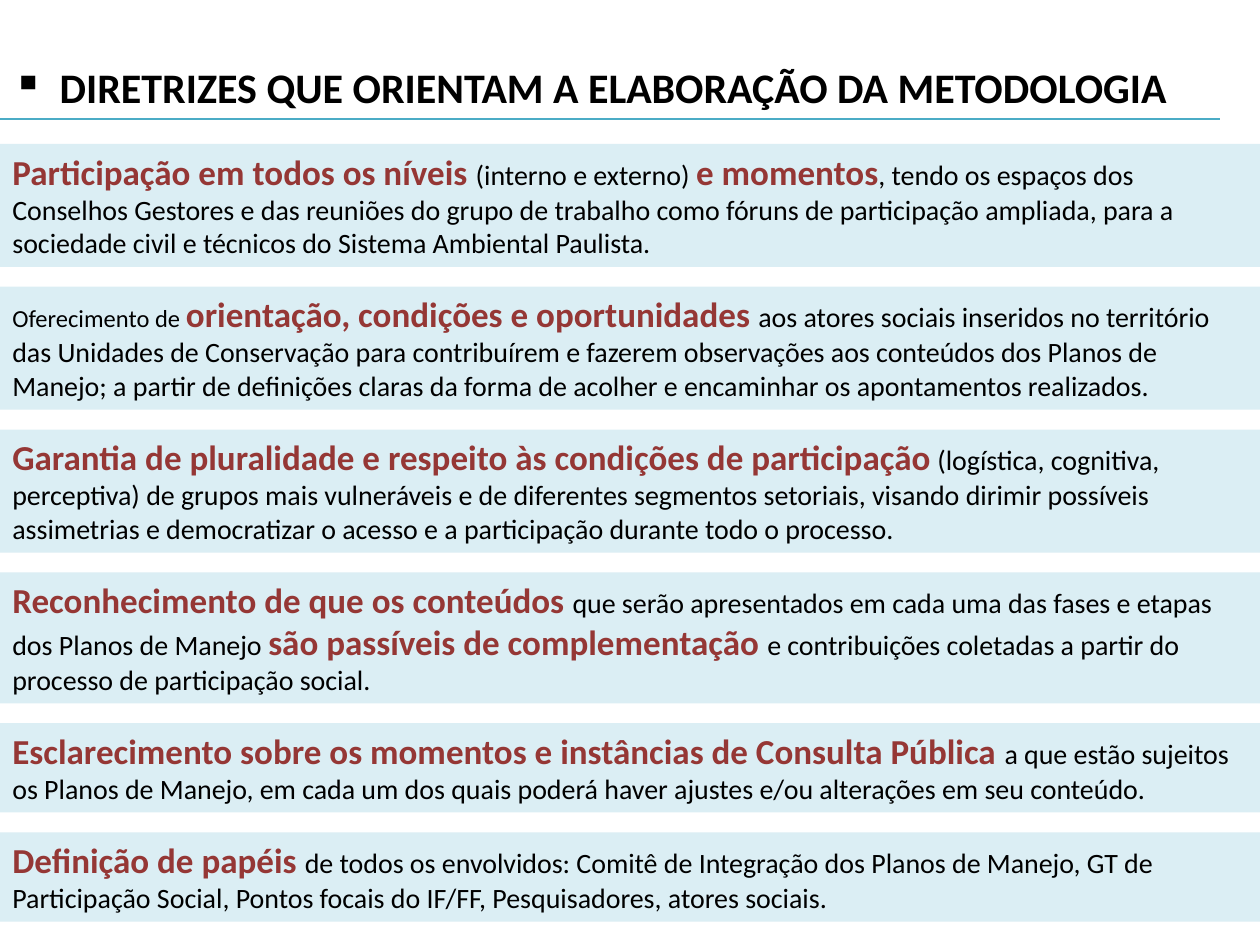
from lxml import etree
from pptx import Presentation
from pptx.dml.color import RGBColor
from pptx.enum.shapes import MSO_CONNECTOR, MSO_SHAPE
from pptx.enum.text import MSO_ANCHOR, MSO_AUTO_SIZE, PP_ALIGN
from pptx.oxml.ns import qn
from pptx.util import Cm, Pt

RECT = MSO_SHAPE.RECTANGLE
STRAIGHT = MSO_CONNECTOR.STRAIGHT
TOP = MSO_ANCHOR.TOP
LEFT = PP_ALIGN.LEFT
NO_FIT = MSO_AUTO_SIZE.NONE

BLACK = RGBColor(0x00, 0x00, 0x00)
RED = RGBColor(0x95, 0x37, 0x35)
PALE = RGBColor(0xDB, 0xEE, 0xF4)
TEAL = RGBColor(0x4B, 0xAC, 0xC6)

HEAD = (24, BLACK, True)
KEY = (20, RED, True)
BODY = (16, BLACK, False)
SMALL = (14, BLACK, False)

WIDTH = 25.4
GAP = 0.4
START = 2.9

TITLE = "DIRETRIZES QUE ORIENTAM A ELABORAÇÃO DA METODOLOGIA"
BANDS = [
    (2.48, [
        ("Participação em todos os níveis ", KEY),
        ("(interno e externo) ", BODY),
        ("e momentos", KEY),
        (", tendo os espaços dos Conselhos Gestores e das reuniões do grupo de "
         "trabalho como fóruns de participação ampliada, para a sociedade civil "
         "e técnicos do Sistema Ambiental Paulista.", BODY),
    ]),
    (2.48, [
        ("Oferecimento de ", SMALL),
        ("orientação, condições e oportunidades ", KEY),
        ("aos atores sociais inseridos no território das Unidades de Conservação "
         "para contribuírem e fazerem observações aos conteúdos dos Planos de "
         "Manejo; a partir de definições claras da forma de acolher e encaminhar "
         "os apontamentos realizados.", BODY),
    ]),
    (2.48, [
        ("Garantia de pluralidade e respeito às condições de participação", KEY),
        (" (logística, cognitiva, perceptiva) de grupos mais vulneráveis e de "
         "diferentes segmentos setoriais, visando dirimir possíveis assimetrias "
         "e democratizar o acesso e a participação durante todo o processo.", BODY),
    ]),
    (2.64, [
        ("Reconhecimento de que os conteúdos ", KEY),
        ("que serão apresentados em cada uma das fases e etapas dos Planos de "
         "Manejo ", BODY),
        ("são passíveis de complementação ", KEY),
        ("e contribuições coletadas a partir do processo de participação "
         "social.", BODY),
    ]),
    (1.8, [
        ("Esclarecimento sobre os momentos e instâncias de Consulta Pública ", KEY),
        ("a que estão sujeitos os Planos de Manejo, em cada um dos quais poderá "
         "haver ajustes e/ou alterações em seu conteúdo.", BODY),
    ]),
    (1.8, [
        ("Definição de papéis ", KEY),
        ("de todos os envolvidos: Comitê de Integração dos Planos de Manejo, GT "
         "de Participação Social, Pontos focais do IF/FF, Pesquisadores, atores "
         "sociais.", BODY),
    ]),
]


class Deck:
    font = "Calibri"

    def __init__(self, slide):
        self.slide = slide

    def label(self, shape, runs):
        frame = shape.text_frame
        frame.word_wrap = True
        frame.auto_size = NO_FIT
        frame.vertical_anchor = TOP
        para = frame.paragraphs[0]
        para.alignment = LEFT
        for text, (size, color, bold) in runs:
            run = para.add_run()
            run.text = text
            run.font.name = self.font
            run.font.size = Pt(size)
            run.font.bold = bold
            run.font.color.rgb = color
        return para

    def title(self, text, top, height):
        shape = self.slide.shapes.title
        shape.left, shape.top = Cm(0), Cm(top)
        shape.width, shape.height = Cm(WIDTH), Cm(height)
        para = self.label(shape, [(text, HEAD)])
        props = para._p.get_or_add_pPr()
        props.set("marL", str(Cm(0.95)))
        props.set("indent", str(-Cm(0.95)))
        etree.SubElement(props, qn("a:buChar")).set("char", "▪")

    def rule(self, top, width):
        line = self.slide.shapes.add_connector(
            STRAIGHT, Cm(0), Cm(top), Cm(width), Cm(top))
        line.line.color.rgb = TEAL
        line.line.width = Pt(0.75)
        etree.SubElement(line._element.spPr, qn("a:effectLst"))

    def band(self, top, height, runs):
        shape = self.slide.shapes.add_shape(
            RECT, Cm(0), Cm(top), Cm(WIDTH), Cm(height))
        shape.shadow.inherit = False
        shape.fill.solid()
        shape.fill.fore_color.rgb = PALE
        shape.line.fill.background()
        self.label(shape, runs)


def main():
    prs = Presentation()
    prs.slide_width, prs.slide_height = Cm(WIDTH), Cm(19.05)
    deck = Deck(prs.slides.add_slide(prs.slide_layouts[5]))
    deck.title(TITLE, 1.12, 1.28)
    deck.rule(2.4, 24.6)
    top = START
    for height, runs in BANDS:
        deck.band(top, height, runs)
        top += height + GAP
    prs.save("out.pptx")


if __name__ == "__main__":
    main()
